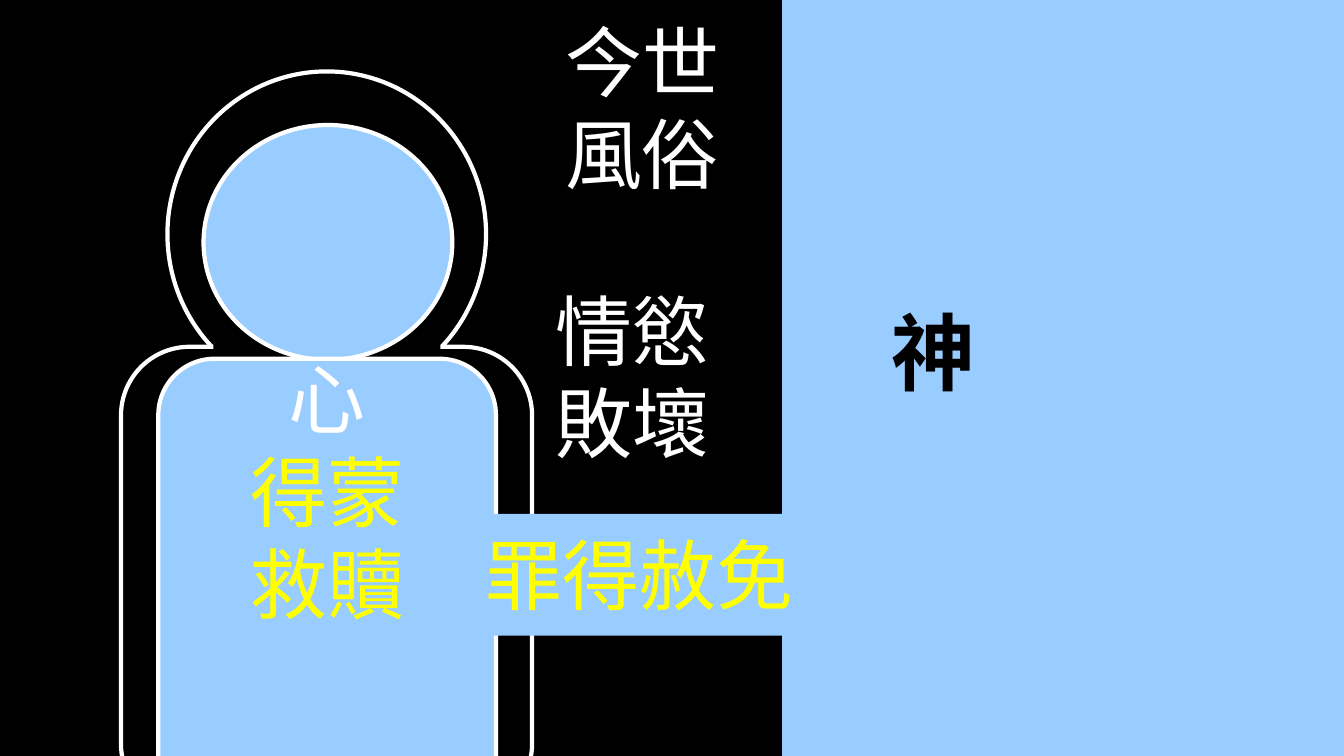
"""Build a slide showing a person, the corrupt world and God."""
from pptx import Presentation
from pptx.dml.color import RGBColor
from pptx.enum.shapes import MSO_SHAPE
from pptx.enum.text import MSO_ANCHOR, PP_ALIGN
from pptx.util import Cm, Pt

COLORS = {"black": "000000", "white": "FFFFFF", "blue": "99CCFF", "yellow": "FFFF00"}


def color(name):
    """Return the named colour."""
    return RGBColor.from_string(COLORS[name])


def add_form(slide, kind, box, fill, line=None):
    """Add a filled preset shape, with a thick outline if asked."""
    shape = slide.shapes.add_shape(kind, *map(Cm, box))
    shape.shadow.inherit = False
    shape.fill.solid()
    shape.fill.fore_color.rgb = color(fill)
    if line:
        shape.line.color.rgb = color(line)
        shape.line.width = Pt(3)
    else:
        shape.line.fill.background()
    return shape


def style(para, tint, size=55, font="Roboto", bold=False, align=PP_ALIGN.CENTER):
    """Format a paragraph and all its runs."""
    para.alignment = align
    for run in para.runs:
        run.font.name = font
        run.font.size = Pt(size)
        run.font.bold = bold
        run.font.color.rgb = color(tint)


def add_label(slide, box, text, tints):
    """Add a wrapped text box with one colour for each paragraph."""
    frame = slide.shapes.add_textbox(*map(Cm, box)).text_frame
    frame.word_wrap = True
    frame.text = text
    for para, tint in zip(frame.paragraphs, tints):
        style(para, tint)


def add_god(slide):
    """Add the bright panel with its bold word."""
    panel = add_form(slide, MSO_SHAPE.RECTANGLE, (19.71, -0.1, 14.33, 23.34), "blue")
    frame = panel.text_frame
    frame.vertical_anchor = MSO_ANCHOR.MIDDLE
    frame.margin_left = Cm(2.77)
    frame.margin_top = 0
    frame.margin_bottom = Cm(5.46)
    frame.text = "神"
    style(frame.paragraphs[0], "black", 60, "Lato", True, PP_ALIGN.LEFT)


def add_man(slide):
    """Add the dark outer figure and the bright inner one."""
    oval, block = MSO_SHAPE.OVAL, MSO_SHAPE.ROUNDED_RECTANGLE
    add_form(slide, oval, (4.22, 1.8, 8.03, 8.2), "black", "white")
    add_form(slide, block, (3.05, 8.74, 10.36, 11.73), "black", "white")
    add_form(slide, MSO_SHAPE.RECTANGLE, (5.38, 8.36, 5.72, 0.89), "black")
    add_form(slide, oval, (5.13, 3.15, 6.27, 5.92), "blue", "white")
    add_form(slide, block, (3.99, 9.04, 8.51, 11.51), "blue", "white")


def main():
    """Build and save the slide."""
    deck = Presentation()
    deck.slide_width, deck.slide_height = Cm(33.87), Cm(19.05)
    slide = deck.slides.add_slide(deck.slide_layouts[6])
    slide.background.fill.solid()
    slide.background.fill.fore_color.rgb = color("black")
    add_man(slide)
    add_label(slide, (13.41, 0.23, 5.54, 4.95), "今世風俗", ["white"])
    add_label(slide, (3.99, 8.74, 8.51, 7.32), "心\n得蒙\v救贖", ["white", "yellow"])
    add_god(slide)
    add_label(slide, (13.16, 7.01, 5.54, 4.95), "情慾敗壞", ["white"])
    add_form(slide, MSO_SHAPE.RECTANGLE, (12.01, 12.95, 8.86, 3.07), "blue")
    add_label(slide, (11.4, 13.16, 9.42, 2.62), "罪得赦免", ["yellow"])
    deck.save("out.pptx")


if __name__ == "__main__":
    main()
